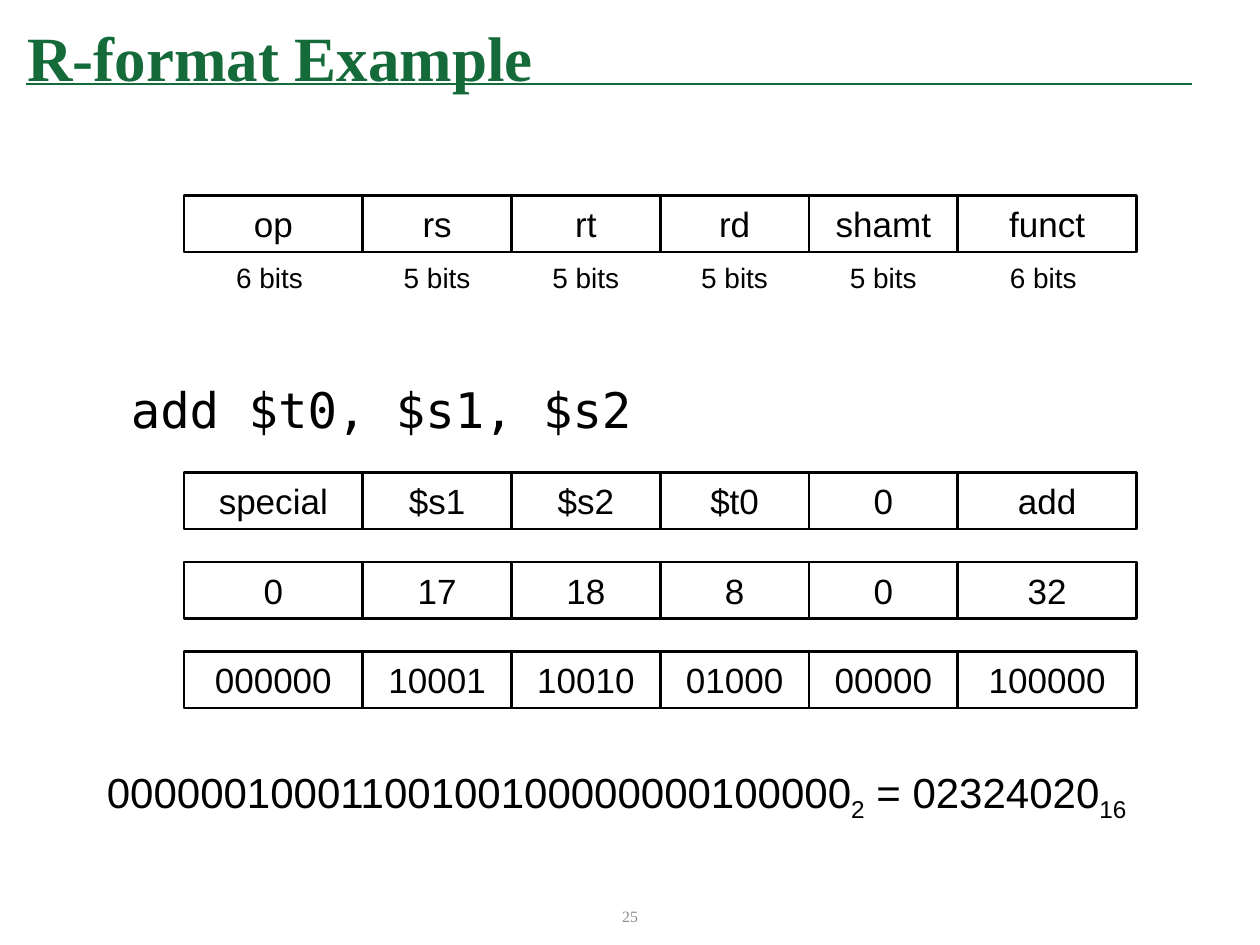
"""Build the slide that encodes an R-format add instruction."""
from dataclasses import dataclass
from itertools import accumulate

from lxml.etree import SubElement
from pptx import Presentation
from pptx.dml.color import RGBColor as RGB
from pptx.enum.shapes import MSO_CONNECTOR as Connector, MSO_SHAPE as Shape
from pptx.enum.text import MSO_ANCHOR as Anchor, PP_ALIGN as Align
from pptx.oxml.ns import qn
from pptx.util import Pt


@dataclass(frozen=True)
class Theme:
    green: RGB = RGB(0x14, 0x6A, 0x39)
    black: RGB = RGB(0, 0, 0)
    gray: RGB = RGB(0x8C, 0x8C, 0x8C)
    serif: str = "Times New Roman"
    sans: str = "Arial"
    mono: str = "DejaVu Sans Mono"
    title: float = 36
    code: float = 28
    result: float = 24
    field: float = 20
    bits: float = 16
    footer: float = 9


def write(frame, *pieces, font, size, color, bold=False, align=Align.LEFT,
          anchor=Anchor.TOP, wrap=True, spacing=None):
    frame.word_wrap = wrap
    frame.vertical_anchor = anchor
    paragraph = frame.paragraphs[0]
    paragraph.alignment = align
    if spacing:
        paragraph.line_spacing = spacing
    for text, baseline in pieces:
        run = paragraph.add_run()
        run.text = text
        run.font.name = font
        run.font.size = Pt(size)
        run.font.bold = bold
        run.font.color.rgb = color
        if baseline:
            run.font._element.set("baseline", str(baseline * 1000))


class SlideBuilder:
    def __init__(self, slide, theme):
        self.slide = slide
        self.theme = theme

    def text(self, box, *pieces, **style):
        label = self.slide.shapes.add_textbox(*map(Pt, box))
        write(label.text_frame, *pieces, **style)

    def rule(self, left, right, top):
        line = self.slide.shapes.add_connector(
            Connector.STRAIGHT, Pt(left), Pt(top), Pt(right), Pt(top))
        line.line.color.rgb = self.theme.green
        line.line.width = Pt(1)
        SubElement(line._element.spPr, qn("a:effectLst"))

    def field(self, box, value):
        cell = self.slide.shapes.add_shape(Shape.RECTANGLE, *map(Pt, box))
        cell.shadow.inherit = False
        cell.fill.background()
        cell.line.color.rgb = self.theme.black
        cell.line.width = Pt(1.5)
        write(cell.text_frame, (value, 0), font=self.theme.sans,
              size=self.theme.field, color=self.theme.black,
              align=Align.CENTER, anchor=Anchor.MIDDLE)

    def word(self, top, lefts, widths, values):
        for left, width, value in zip(lefts, widths, values):
            self.field((left, top, width, 32.4), value)


def main():
    deck = Presentation()
    deck.slide_width, deck.slide_height = Pt(720), Pt(540)
    theme = Theme()
    builder = SlideBuilder(deck.slides.add_slide(deck.slide_layouts[6]), theme)

    builder.rule(15.1, 681.1, 48.2)
    builder.text((8.6, 5, 661.7, 52.6), ("R-format Example", 0), font=theme.serif,
                 size=theme.title, color=theme.green, bold=True, anchor=Anchor.BOTTOM)
    builder.text((268.6, 509, 182.9, 28.8), ("25", 0), font=theme.serif,
                 size=theme.footer, color=theme.gray, align=Align.CENTER,
                 anchor=Anchor.MIDDLE)

    bit_counts = (6, 5, 5, 5, 5, 6)
    widths = [102.2 if bits == 6 else 85 for bits in bit_counts]
    lefts = list(accumulate(widths[:-1], initial=105.1))
    builder.word(111.6, lefts, widths, ("op", "rs", "rt", "rd", "shamt", "funct"))
    label_width = 52.6
    for bits, left, width in zip(bit_counts, lefts, widths):
        nudge = -2.2 if bits == 6 else 0
        label_left = left + (width - label_width) / 2 + nudge
        builder.text((label_left, 145.4, label_width, 26.6), (f"{bits} bits", 0),
                     font=theme.sans, size=theme.bits, color=theme.black,
                     align=Align.CENTER, wrap=False)

    builder.text((67.7, 196.6, 638, 51.1), ("add $t0, $s1, $s2", 0), font=theme.mono,
                 size=theme.code, color=theme.black, spacing=1.5)
    encodings = (
        ("special", "$s1", "$s2", "$t0", "0", "add"),
        ("0", "17", "18", "8", "0", "32"),
        ("000000", "10001", "10010", "01000", "00000", "100000"),
    )
    for row, values in enumerate(encodings):
        builder.word(270 + 51.1 * row, lefts, widths, values)

    builder.text((54, 434.2, 640.8, 39.6),
                 ("00000010001100100100000000100000", 0), ("2", -25),
                 (" = 02324020", 0), ("16", -25),
                 font=theme.sans, size=theme.result, color=theme.black)
    deck.save("out.pptx")


if __name__ == "__main__":
    main()
